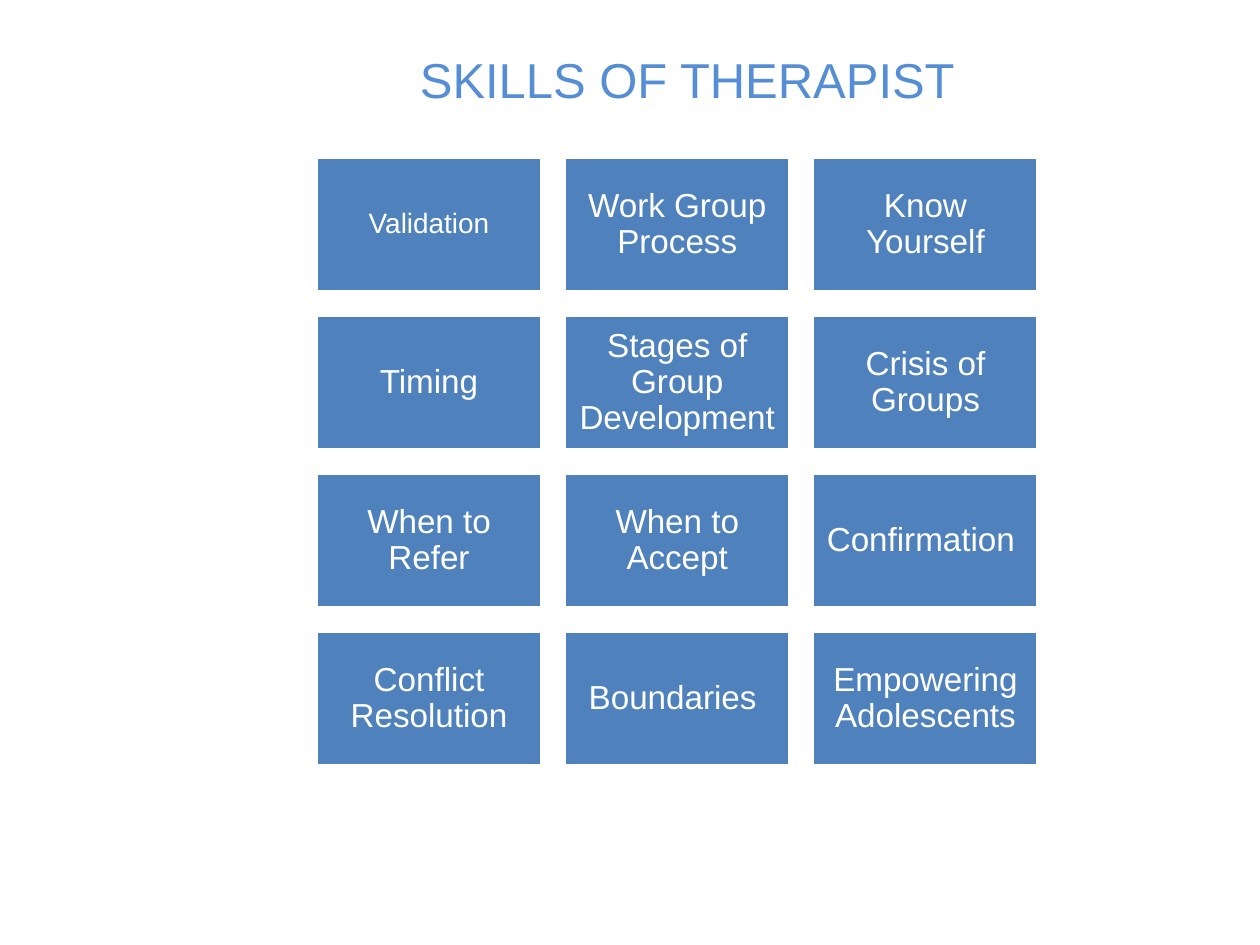
from pptx import Presentation
from pptx.dml.color import RGBColor
from pptx.enum.shapes import MSO_SHAPE
from pptx.enum.text import MSO_ANCHOR, MSO_AUTO_SIZE, PP_ALIGN
from pptx.util import Inches, Pt

RECTANGLE = MSO_SHAPE.RECTANGLE
MIDDLE = MSO_ANCHOR.MIDDLE
NO_AUTOFIT = MSO_AUTO_SIZE.NONE
CENTER = PP_ALIGN.CENTER

FONT = "Arial"
TITLE_BLUE, TILE_BLUE, WHITE = "558ED5", "4F81BD", "FFFFFF"

# Tile grid, in inches
GRID_LEFT, GRID_TOP = 2.51, 1.25
TILE_WIDTH, TILE_HEIGHT = 1.79, 1.07
COLUMN_STEP, ROW_STEP = 1.97, 3.76 / 3

SKILLS = [
    ["Validation", "Work Group Process", "Know Yourself"],
    ["Timing", "Stages of Group Development", "Crisis of Groups"],
    ["When to Refer", "When to Accept", "Confirmation "],
    ["Conflict Resolution", "Boundaries ", "Empowering Adolescents"],
]


def rgb(color):
    return RGBColor.from_string(color)


def set_text(s, text, size, color):
    tf = s.text_frame
    tf.text = text
    tf.word_wrap = True
    tf.auto_size = NO_AUTOFIT
    tf.vertical_anchor = MIDDLE
    p = tf.paragraphs[0]
    p.alignment = CENTER
    font = p.runs[0].font
    font.name, font.size = FONT, Pt(size)
    font.color.rgb = rgb(color)
    return tf


def add_title(slide, text):
    s = slide.shapes.title
    s.left, s.top = Inches(1.58), Inches(0.25)
    s.width, s.height = Inches(7.75), Inches(0.75)
    set_text(s, text, 28, TITLE_BLUE)


def add_tile(slide, row, column, text, size, inset):
    s = slide.shapes.add_shape(
        RECTANGLE,
        Inches(GRID_LEFT + column * COLUMN_STEP),
        Inches(GRID_TOP + row * ROW_STEP),
        Inches(TILE_WIDTH), Inches(TILE_HEIGHT))
    s.shadow.inherit = False
    s.fill.solid()
    s.fill.fore_color.rgb = rgb(TILE_BLUE)
    s.line.color.rgb = rgb(WHITE)
    s.line.width = Pt(2)
    tf = set_text(s, text, size, WHITE)
    tf.margin_left = tf.margin_right = Inches(inset)
    tf.margin_top = tf.margin_bottom = Inches(inset)
    tf.paragraphs[0].line_spacing = 0.9


def main():
    prs = Presentation()
    prs.slide_width, prs.slide_height = Inches(10), Inches(7.5)
    slide = prs.slides.add_slide(prs.slide_layouts[0])

    # Title, without the unused subtitle
    add_title(slide, "SKILLS OF THERAPIST")
    subtitle = slide.placeholders[1].element
    subtitle.getparent().remove(subtitle)

    # Skill tiles; the first one has smaller text
    for row, names in enumerate(SKILLS):
        for column, name in enumerate(names):
            size, inset = (16, 0.07) if row == column == 0 else (19, 0.08)
            add_tile(slide, row, column, name, size, inset)

    prs.save("out.pptx")


if __name__ == "__main__":
    main()
